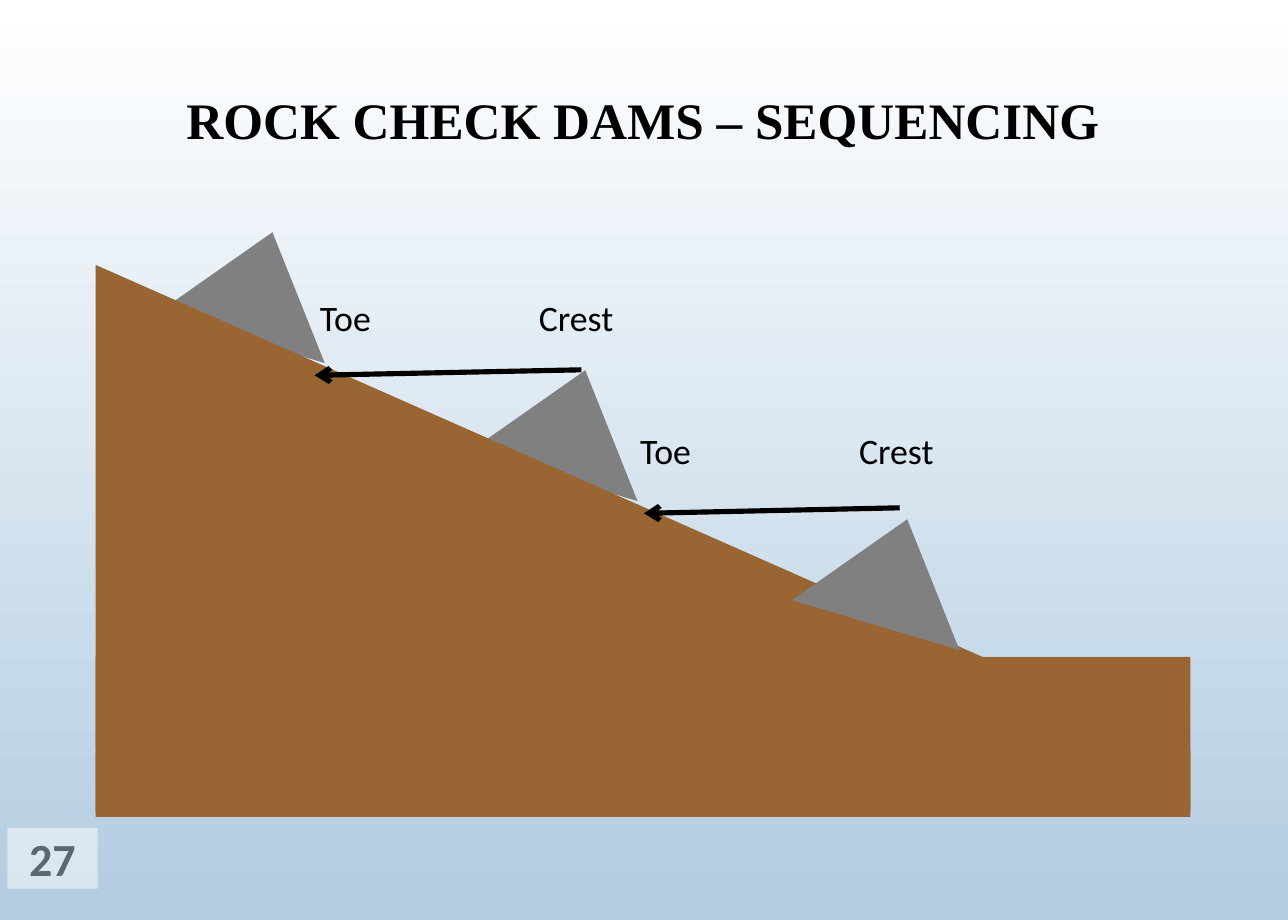
from dataclasses import dataclass

from lxml import etree
from pptx import Presentation
from pptx import util as u
from pptx.dml.color import RGBColor
from pptx.enum import shapes, text
from pptx.oxml.ns import qn


@dataclass(frozen=True)
class Theme:
    black: str = "000000"
    white: str = "FFFFFF"
    sky: str = "B2CCE1"
    soil: str = "996633"
    rock: str = "808080"
    slate: str = "5C6770"
    serif: str = "Times New Roman"
    sans: str = "Calibri"
    title: int = 20
    label: int = 14
    number: int = 18
    line: int = 2


THEME = Theme()
KIND = shapes.MSO_SHAPE
LEFT, WIDTH = 0.52, 5.95  # shared by the title and the ground


def inches(*sizes):
    return [u.Inches(size) for size in sizes]


def add_run(para, words, face, size, color, bold=False):
    run = para.add_run()
    run.text = words
    run.font.name = face
    run.font.size = u.Pt(size)
    run.font.bold = bold
    run.font.color.rgb = RGBColor.from_string(color)


def paint_sky(slide):
    fill = slide.background.fill
    fill.gradient()
    fill.gradient_angle = 270
    for stop, color in zip(fill.gradient_stops, (THEME.white, THEME.sky)):
        stop.color.rgb = RGBColor.from_string(color)


def set_title(slide, words):
    title = slide.shapes.title
    title.left, title.top, title.width, title.height = inches(LEFT, 0.09, WIDTH, 1.16)
    frame = title.text_frame
    frame.word_wrap = True
    frame.vertical_anchor = text.MSO_ANCHOR.MIDDLE
    para = frame.paragraphs[0]
    para.alignment = text.PP_ALIGN.CENTER
    para.line_spacing = 0.9
    add_run(para, words, THEME.serif, THEME.title, THEME.black, bold=True)


def add_solid(slide, kind, box, color, turn=0):
    shape = slide.shapes.add_shape(kind, *inches(*box))
    shape.shadow.inherit = False
    shape.fill.solid()
    shape.fill.fore_color.rgb = RGBColor.from_string(color)
    shape.line.fill.background()
    shape.rotation = turn
    return shape


def add_dam(slide, left, top):
    add_solid(slide, KIND.ISOSCELES_TRIANGLE, (left, top, 0.95, 0.6), THEME.rock, 16.6)


def add_label(slide, words, left, top):
    box = slide.shapes.add_textbox(*inches(left, top, 0.79, 0.48))
    frame = box.text_frame
    frame.word_wrap = True
    add_run(frame.paragraphs[0], words, THEME.sans, THEME.label, THEME.black)


def add_arrow(slide, start, end):
    arrow = slide.shapes.add_connector(
        shapes.MSO_CONNECTOR.STRAIGHT, *inches(*start, *end))
    arrow.line.color.rgb = RGBColor.from_string(THEME.black)
    arrow.line.width = u.Pt(THEME.line)
    props = arrow._element.spPr
    etree.SubElement(props.find(qn("a:ln")), qn("a:tailEnd"), type="arrow")
    etree.SubElement(props, qn("a:effectLst"))


def add_number(slide, words):
    badge = add_solid(slide, KIND.RECTANGLE, (0.04, 4.5, 0.49, 0.33), THEME.white)
    color = badge._element.spPr.find(qn("a:solidFill")).find(qn("a:srgbClr"))
    etree.SubElement(color, qn("a:alpha"), val="50000")
    frame = badge.text_frame
    frame.margin_left = frame.margin_right = 0
    frame.margin_top = frame.margin_bottom = 0
    frame.vertical_anchor = text.MSO_ANCHOR.MIDDLE
    para = frame.paragraphs[0]
    para.alignment = text.PP_ALIGN.CENTER
    add_run(para, words, THEME.sans, THEME.number, THEME.slate, bold=True)


def main():
    deck = Presentation()
    deck.slide_width, deck.slide_height = inches(7, 5)
    slide = deck.slides.add_slide(deck.slide_layouts[5])
    paint_sky(slide)
    set_title(slide, "ROCK CHECK DAMS – SEQUENCING")

    # Upper dams, partly buried by the slope
    for left, top in ((0.92, 1.25), (2.62, 2)):
        add_dam(slide, left, top)

    # Slope and ground
    for kind, top, height in ((KIND.RIGHT_TRIANGLE, 1.44, 2.63),
                              (KIND.RECTANGLE, 4.08, 0.36),
                              (KIND.RECTANGLE, 3.57, 0.84)):
        add_solid(slide, kind, (LEFT, top, WIDTH, height), THEME.soil)

    # Lowest dam, in front of the slope
    add_dam(slide, 4.37, 2.81)

    # Level lines from each crest to the toe above it
    for start, end in (((3.16, 2.01), (1.71, 2.04)),
                       ((4.89, 2.76), (3.5, 2.79))):
        add_arrow(slide, start, end)
    for left, top in ((1.64, 1.56), (3.38, 2.28)):
        add_label(slide, "Toe", left, top)
        add_label(slide, "Crest", left + 1.19, top)

    # Slide number
    add_number(slide, "27")
    deck.save("out.pptx")


if __name__ == "__main__":
    main()
